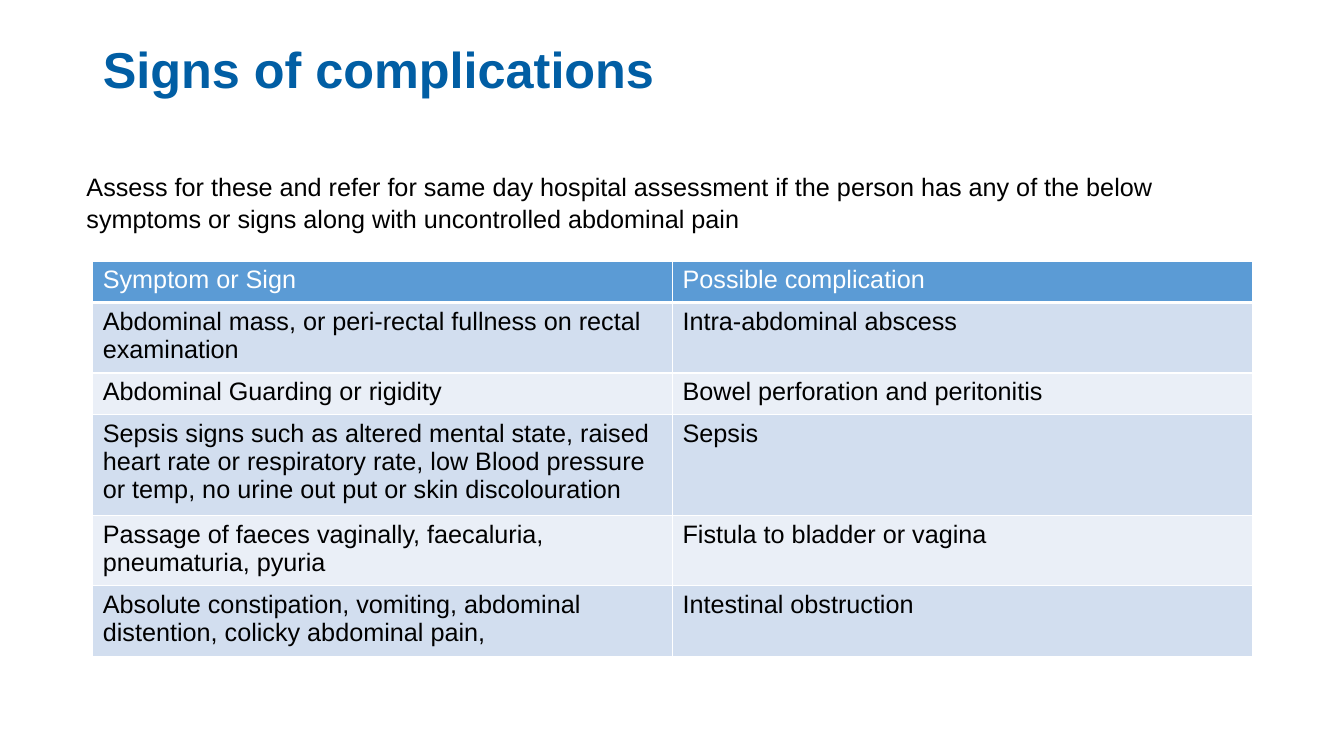
import pptx
import pptx.dml.color
import pptx.enum.text
import pptx.oxml
import pptx.oxml.ns
import pptx.util

WIDTH, HEIGHT = 13.33, 7.5
MARGIN, CONTENT_WIDTH = 0.92, 11.5
FONT = "Arial"
BLACK, WHITE, TITLE_BLUE = "000000", "FFFFFF", "015EA4"
HEADER_FILL, BAND_FILLS = "5B9BD5", ("D2DEEF", "EAEFF7")
ROW_HEIGHT = 0.41

COMPLICATIONS = [
    ("Symptom or Sign", "Possible complication"),
    ("Abdominal mass, or peri-rectal fullness on rectal examination",
     "Intra-abdominal abscess"),
    ("Abdominal Guarding or rigidity", "Bowel perforation and peritonitis"),
    ("Sepsis signs such as altered mental state, raised heart rate or "
     "respiratory rate, low Blood pressure or temp, no urine out put or "
     "skin discolouration", "Sepsis"),
    ("Passage of faeces vaginally, faecaluria, pneumaturia, pyuria",
     "Fistula to bladder or vagina"),
    ("Absolute constipation, vomiting, abdominal distention, colicky "
     "abdominal pain,", "Intestinal obstruction"),
]


def color(value):
    return pptx.dml.color.RGBColor.from_string(value)


def inches(*lengths):
    return [pptx.util.Inches(length) for length in lengths]


def write(frame, text, size, ink, bold=False, spacing=1.0):
    frame.text = text
    frame.word_wrap = True
    frame.vertical_anchor = pptx.enum.text.MSO_ANCHOR.TOP
    paragraph = frame.paragraphs[0]
    paragraph.alignment = pptx.enum.text.PP_ALIGN.LEFT
    paragraph.line_spacing = spacing
    font = paragraph.runs[0].font
    font.name, font.size, font.bold = FONT, pptx.util.Pt(size), bold
    font.color.rgb = color(ink)


def add_title(slide, box):
    title = slide.shapes.title
    title.left, title.top, title.width, title.height = inches(*box)
    write(title.text_frame, "Signs of complications", 36, TITLE_BLUE,
          bold=True, spacing=0.9)
    title.text_frame.auto_size = pptx.enum.text.MSO_AUTO_SIZE.NONE


def add_advice(slide, box):
    advice = slide.shapes.add_textbox(*inches(*box))
    write(advice.text_frame,
          "Assess for these and refer for same day hospital assessment if the "
          "person has any of the below symptoms or signs along with "
          "uncontrolled abdominal pain", 18, BLACK, spacing=1.05)


def outline_cell(cell, bottom_width):
    """Draw white borders; they must precede the fill in the cell XML."""
    properties = cell._tc.get_or_add_tcPr()
    widths = {"lnL": 1, "lnR": 1, "lnT": 1, "lnB": bottom_width}
    for position, (side, width) in enumerate(widths.items()):
        properties.insert(position, pptx.oxml.parse_xml(
            f'<a:{side} {pptx.oxml.ns.nsdecls("a")} w="{pptx.util.Pt(width)}">'
            f'<a:solidFill><a:srgbClr val="{WHITE}"/></a:solidFill></a:{side}>'))


def add_complications_table(slide, left, top, width):
    rows, columns = len(COMPLICATIONS), len(COMPLICATIONS[0])
    table = slide.shapes.add_table(
        rows, columns, *inches(left, top, width, rows * ROW_HEIGHT)).table
    for row, entries in enumerate(COMPLICATIONS):
        header = row == 0
        for column, entry in enumerate(entries):
            cell = table.cell(row, column)
            write(cell.text_frame, entry, 18, WHITE if header else BLACK)
            cell.fill.solid()
            cell.fill.fore_color.rgb = color(
                HEADER_FILL if header else BAND_FILLS[(row - 1) % 2])
            outline_cell(cell, 3 if row == 0 else 1)


def main():
    deck = pptx.Presentation()
    deck.slide_width, deck.slide_height = inches(WIDTH, HEIGHT)
    slide = deck.slides.add_slide(deck.slide_layouts[5])
    add_title(slide, (MARGIN, 0.4, CONTENT_WIDTH, 1.2))
    add_advice(slide, (0.76, 1.64, CONTENT_WIDTH, 0.8))
    add_complications_table(slide, MARGIN, 2.59, CONTENT_WIDTH)
    deck.save("out.pptx")


if __name__ == "__main__":
    main()
